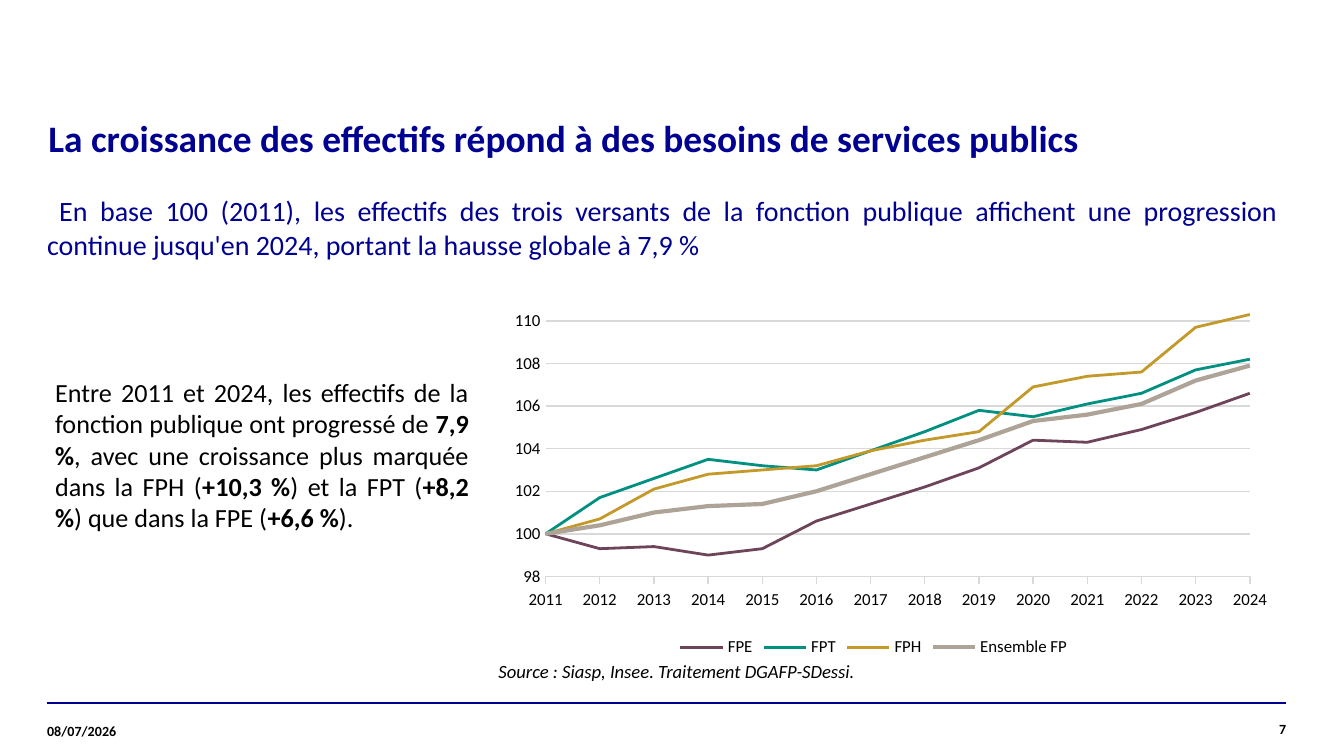
from lxml import etree
from pptx import Presentation
from pptx.chart.data import CategoryChartData
from pptx.dml.color import RGBColor
from pptx.enum.chart import XL_CHART_TYPE, XL_LEGEND_POSITION, XL_MARKER_STYLE, XL_TICK_MARK
from pptx.enum.shapes import MSO_CONNECTOR
from pptx.enum.text import MSO_ANCHOR, MSO_AUTO_SIZE, PP_ALIGN
from pptx.oxml import parse_xml
from pptx.oxml.ns import nsdecls, qn
from pptx.util import Inches, Pt

LINE, BOTTOM, NO_MARK = XL_CHART_TYPE.LINE, XL_LEGEND_POSITION.BOTTOM, XL_MARKER_STYLE.NONE
OUTSIDE, NO_TICK = XL_TICK_MARK.OUTSIDE, XL_TICK_MARK.NONE
STRAIGHT = MSO_CONNECTOR.STRAIGHT
TOP, MIDDLE = MSO_ANCHOR.TOP, MSO_ANCHOR.MIDDLE
LEFT, RIGHT, JUSTIFY = PP_ALIGN.LEFT, PP_ALIGN.RIGHT, PP_ALIGN.JUSTIFY
NO_FIT = MSO_AUTO_SIZE.NONE

FONT = "Calibri"
NAVY = RGBColor(0x00, 0x00, 0x91)
BLACK = RGBColor(0x00, 0x00, 0x00)
GREY = RGBColor(0xD9, 0xD9, 0xD9)
PLUM = RGBColor(0x6E, 0x44, 0x5A)
TEAL = RGBColor(0x00, 0x90, 0x81)
GOLD = RGBColor(0xC3, 0x99, 0x2A)
TAUPE = RGBColor(0xAE, 0xA3, 0x97)

TITLE = "La croissance des effectifs répond à des besoins de services publics"
LEAD = ("En base 100 (2011), les effectifs des trois versants de la fonction publique "
        "affichent une progression continue jusqu'en 2024, portant la hausse globale à 7,9 %")
# Plain and bold runs alternate, starting with plain
COMMENT = [
    "Entre 2011 et 2024, les effectifs de la fonction publique ont progressé de ",
    "7,9 %", ", avec une croissance plus marquée dans la FPH (",
    "+10,3 %", ") et la FPT (", "+8,2 %", ") que dans la FPE (", "+6,6 %", ").",
]
SOURCE = "Source : Siasp, Insee. Traitement DGAFP-SDessi."
DATE, PAGE = "08/07/2026", "7"

YEARS = [str(year) for year in range(2011, 2025)]
SERIES = [
    ("FPE", PLUM, 1.5, [100, 99.3, 99.4, 99, 99.3, 100.6, 101.4, 102.2, 103.1,
                        104.4, 104.3, 104.9, 105.7, 106.6]),
    ("FPT", TEAL, 1.5, [100, 101.7, 102.6, 103.5, 103.2, 103, 103.9, 104.8, 105.8,
                        105.5, 106.1, 106.6, 107.7, 108.2]),
    ("FPH", GOLD, 1.5, [100, 100.7, 102.1, 102.8, 103, 103.2, 103.9, 104.4, 104.8,
                        106.9, 107.4, 107.6, 109.7, 110.3]),
    ("Ensemble FP", TAUPE, 2.25, [100, 100.4, 101, 101.3, 101.4, 102, 102.8, 103.6, 104.4,
                                  105.3, 105.6, 106.1, 107.2, 107.9]),
]
# Inner plot area, in inches within the chart
CHART = (3.43, 2.08, 6.14, 2.85)
PLOT = {"x": 0.63, "y": 0.15, "w": 5.24, "h": 2.06}


def style(font, size, color=BLACK, bold=False, italic=False):
    font.name, font.size = FONT, Pt(size)
    font.bold, font.italic = bold, italic
    font.color.rgb = color


def write(shape, box, runs, size, color=BLACK, bold=False, italic=False,
          align=LEFT, anchor=TOP, inset=(0, 0), indent=(0, 0), spacing=1.0):
    """Place a shape and fill it with one paragraph; every second run is bold."""
    shape.left, shape.top, shape.width, shape.height = map(Inches, box)
    frame = shape.text_frame
    frame.word_wrap, frame.auto_size, frame.vertical_anchor = True, NO_FIT, anchor
    frame.margin_left = frame.margin_right = Inches(inset[0])
    frame.margin_top = frame.margin_bottom = Inches(inset[1])
    para = frame.paragraphs[0]
    props = para._p.get_or_add_pPr()
    props.set("marL", str(Inches(indent[0])))
    props.set("indent", str(Inches(indent[1])))
    etree.SubElement(props, qn("a:buNone"))
    para.alignment, para.space_before, para.line_spacing = align, Pt(0), spacing
    for i, text in enumerate(runs):
        run = para.add_run()
        run.text = text
        style(run.font, size, color, bold or i % 2 == 1, italic)


def add_box(slide):
    return slide.shapes.add_textbox(0, 0, 0, 0)


def add_rule(slide):
    rule = slide.shapes.add_connector(
        STRAIGHT, Inches(0.35), Inches(5.23), Inches(9.57), Inches(5.23))
    rule.line.color.rgb, rule.line.width = NAVY, Pt(0.8)
    etree.SubElement(rule._element.spPr, qn("a:effectLst"))


def set_plot(chart):
    """Fix the inner plot area and start the lines on the value axis."""
    plot = chart._chartSpace.find(".//" + qn("c:plotArea"))
    for old in plot.findall(qn("c:layout")):
        plot.remove(old)
    modes = "".join(f'<c:{k}Mode val="edge"/>' for k in "xy")
    sides = {"x": CHART[2], "y": CHART[3], "w": CHART[2], "h": CHART[3]}
    sizes = "".join(f'<c:{k} val="{v / sides[k]:.4f}"/>' for k, v in PLOT.items())
    plot.insert(0, parse_xml(
        f'<c:layout {nsdecls("c")}><c:manualLayout><c:layoutTarget val="inner"/>'
        f'{modes}{sizes}</c:manualLayout></c:layout>'))
    axis = plot.find(qn("c:valAx"))
    cross = axis.find(qn("c:crossBetween"))
    if cross is None:
        cross = etree.Element(qn("c:crossBetween"))
        axis.find(qn("c:crosses")).addnext(cross)
    cross.set("val", "midCat")


def add_graph(slide):
    data = CategoryChartData(number_format="0.0")
    data.categories = YEARS
    for name, _, _, values in SERIES:
        data.add_series(name, values)
    chart = slide.shapes.add_chart(LINE, *map(Inches, CHART), data).chart
    chart.has_title = False
    style(chart.font, 10)
    chart.has_legend = True
    chart.legend.position, chart.legend.include_in_layout = BOTTOM, False
    style(chart.legend.font, 9)
    chart.plots[0].vary_by_categories = False
    for series, (_, color, width, _) in zip(chart.plots[0].series, SERIES):
        series.smooth, series.marker.style = False, NO_MARK
        series.format.line.color.rgb = color
        series.format.line.width = Pt(width)

    years, index = chart.category_axis, chart.value_axis
    for axis, tick in ((years, OUTSIDE), (index, NO_TICK)):
        axis.major_tick_mark, axis.minor_tick_mark = tick, NO_TICK
        style(axis.tick_labels.font, 9)
    index.minimum_scale, index.maximum_scale, index.major_unit = 98, 111, 2
    index.tick_labels.number_format = "0"
    index.tick_labels.number_format_is_linked = False
    index.format.line.fill.background()
    index.has_major_gridlines = True
    for line in (years.format.line, index.major_gridlines.format.line):
        line.color.rgb, line.width = GREY, Pt(0.75)
    set_plot(chart)


def main():
    deck = Presentation()
    deck.slide_width = Inches(10)
    deck.slide_height = deck.slide_width * 9 // 16
    slide = deck.slides.add_slide(deck.slide_layouts.get_by_name("Two Content"))
    title, lead, comment = slide.placeholders

    add_rule(slide)
    write(title, (0.34, 0.84, 9.38, 0.41), [TITLE], 20, NAVY, bold=True,
          anchor=MIDDLE, inset=(0, 0.05), indent=(0.02, 0), spacing=0.9)
    write(lead, (0.34, 1.44, 9.17, 0.5), [LEAD], 15, NAVY,
          align=JUSTIFY, indent=(0.01, 0.09))
    write(comment, (0.31, 2.8, 3.18, 1.96), COMMENT, 14,
          align=JUSTIFY, indent=(0.1, 0))
    add_graph(slide)
    write(add_box(slide), (3.61, 4.86, 5.75, 0.27), [SOURCE], 10, italic=True,
          align=JUSTIFY, inset=(0.1, 0.05))
    write(add_box(slide), (0.35, 5.25, 1.32, 0.38), [DATE], 7.5, bold=True, anchor=MIDDLE)
    write(add_box(slide), (8.09, 5.23, 1.48, 0.39), [PAGE], 7.5, bold=True,
          align=RIGHT, anchor=MIDDLE)
    deck.save("out.pptx")


if __name__ == "__main__":
    main()
